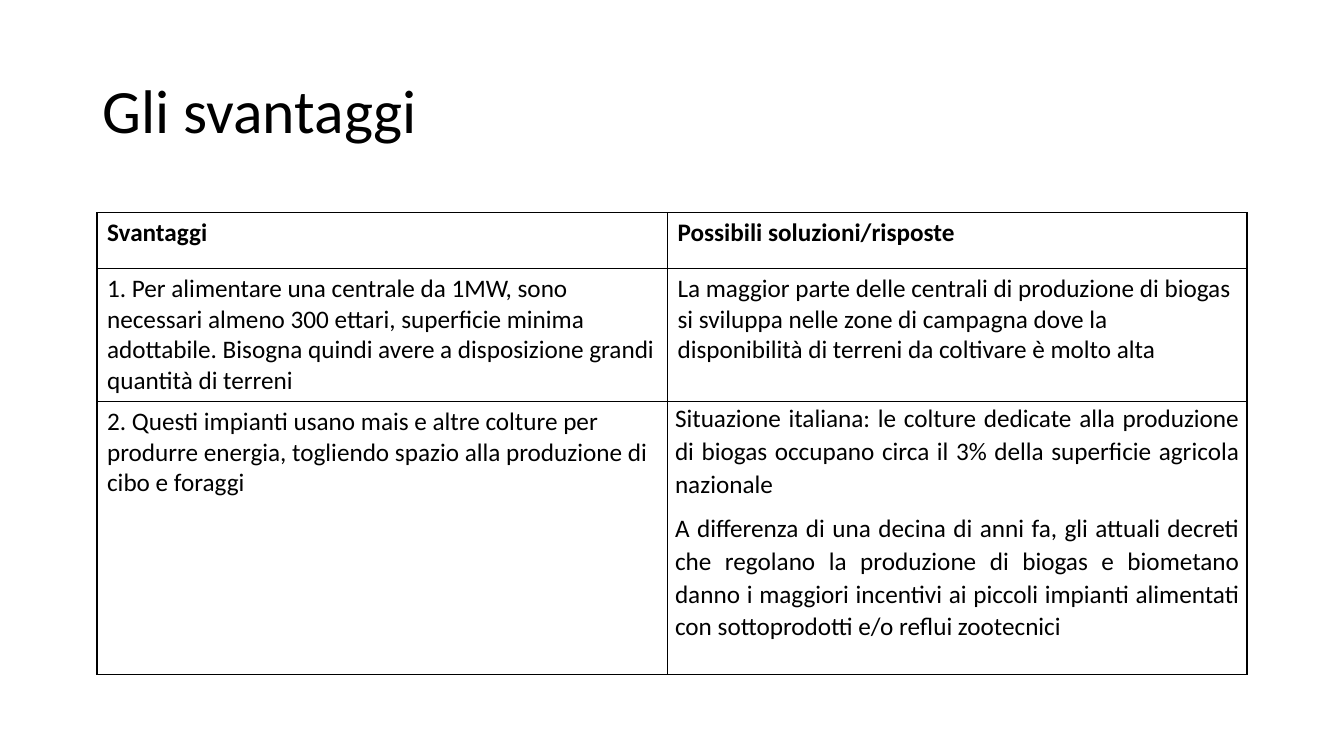
from dataclasses import dataclass

from lxml import etree
from pptx import Presentation
from pptx.dml.color import RGBColor
from pptx.enum.text import MSO_ANCHOR, PP_ALIGN
from pptx.oxml.ns import qn
from pptx.util import Pt

MIDDLE = MSO_ANCHOR.MIDDLE
JUSTIFY = PP_ALIGN.JUSTIFY


@dataclass(frozen=True)
class Theme:
    font: str = "Calibri"
    ink: str = "000000"
    title: int = 44
    body: int = 18
    line: int = 1


THEME = Theme()
COLS = (407.5, 414)
ROWS = (39.6, 95, 195.2)
CELLS = (
    ("Svantaggi", "Possibili soluzioni/risposte"),
    (
        "1. Per alimentare una centrale da 1MW, sono necessari almeno 300 ettari, "
        "superficie minima adottabile. Bisogna quindi avere a disposizione grandi "
        "quantità di terreni",
        "La maggior parte delle centrali di produzione di biogas si sviluppa nelle "
        "zone di campagna dove la disponibilità di terreni da coltivare è molto alta",
    ),
    (
        "2. Questi impianti usano mais e altre colture per produrre energia, "
        "togliendo spazio alla produzione di cibo e foraggi",
        "Situazione italiana: le colture dedicate alla produzione di biogas "
        "occupano circa il 3% della superficie agricola nazionale\n"
        "A differenza di una decina di anni fa, gli attuali decreti che regolano "
        "la produzione di biogas e biometano danno i maggiori incentivi ai piccoli "
        "impianti alimentati con sottoprodotti e/o reflui zootecnici",
    ),
)


def set_text(frame, text, size, bold=False):
    frame.text = text
    for para in frame.paragraphs:
        for run in para.runs:
            run.font.name = THEME.font
            run.font.size = Pt(size)
            run.font.bold = bold
            run.font.color.rgb = RGBColor.from_string(THEME.ink)


def add_title(slide, text):
    box = slide.shapes.add_textbox(Pt(66), Pt(28.8), Pt(828), Pt(104.4))
    frame = box.text_frame
    frame.word_wrap = True
    frame.vertical_anchor = MIDDLE
    set_text(frame, text, THEME.title)
    frame.paragraphs[0].line_spacing = 0.9


def set_edges(cell):
    """Draw the four borders, which must come before the cell's fill."""
    props = cell._tc.get_or_add_tcPr()
    for spot, side in enumerate(("a:lnL", "a:lnR", "a:lnT", "a:lnB")):
        line = etree.Element(qn(side), w=str(Pt(THEME.line)))
        fill = etree.SubElement(line, qn("a:solidFill"))
        etree.SubElement(fill, qn("a:srgbClr"), val=THEME.ink)
        props.insert(spot, line)


def justify(cell):
    cell.margin_left = cell.margin_right = Pt(5.4)
    cell.margin_top = cell.margin_bottom = Pt(0)
    for para in cell.text_frame.paragraphs:
        para.alignment = JUSTIFY
        para.line_spacing = 1.07
        para.space_after = Pt(8)


def add_grid(slide):
    frame = slide.shapes.add_table(
        len(ROWS), len(COLS), Pt(69.3), Pt(152), Pt(sum(COLS)), Pt(sum(ROWS))
    )
    table = frame.table
    table.horz_banding = False
    for col, width in zip(table.columns, COLS):
        col.width = Pt(width)
    for row, height, texts in zip(table.rows, ROWS, CELLS):
        row.height = Pt(height)
        for cell, text in zip(row.cells, texts):
            set_text(cell.text_frame, text, THEME.body, texts is CELLS[0])
            cell.fill.background()
            set_edges(cell)
    justify(table.cell(2, 1))


def main():
    deck = Presentation()
    deck.slide_width, deck.slide_height = Pt(960), Pt(540)
    slide = deck.slides.add_slide(deck.slide_layouts[6])
    add_title(slide, "Gli svantaggi")
    add_grid(slide)
    deck.save("out.pptx")


if __name__ == "__main__":
    main()
